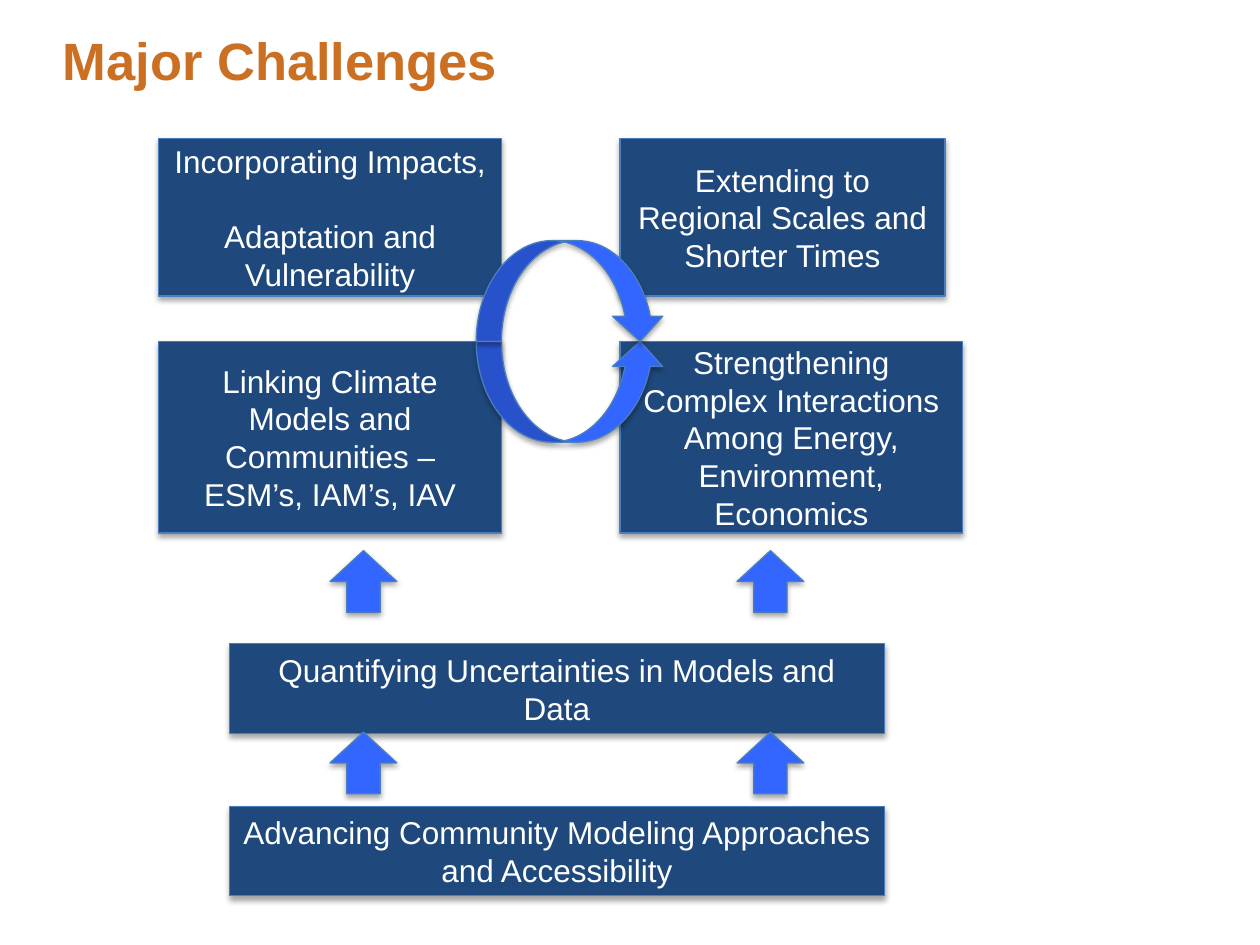
from dataclasses import dataclass
from itertools import product

from lxml.etree import SubElement
from pptx import Presentation
from pptx.dml.color import RGBColor
from pptx.enum.shapes import MSO_SHAPE
from pptx.enum.text import MSO_ANCHOR, PP_ALIGN
from pptx.oxml.ns import qn
from pptx.util import Inches, Pt


@dataclass(frozen=True)
class Theme:
    font: str = "Arial"
    title: str = "CB7023"
    box: str = "1F497D"
    arrow: str = "3366FF"
    line: str = "4B7EBC"
    text: str = "FFFFFF"
    shadow: str = "000000"
    title_size: int = 30
    box_size: int = 18
    line_width: float = 0.75


@dataclass(frozen=True)
class Box:
    text: str
    left: float
    top: float
    width: float
    height: float


THEME = Theme()
LEFT, RIGHT, BAR = 1.26, 4.92, 1.82
UPPER, LOWER = 1.1, 2.71
BOXES = (
    Box("Strengthening Complex Interactions Among Energy, Environment, Economics",
        RIGHT, LOWER, 2.72, 1.52),
    Box("Extending to Regional Scales and Shorter Times", RIGHT, UPPER, 2.58, 1.25),
    Box("Incorporating Impacts, \vAdaptation and Vulnerability", LEFT, UPPER, 2.72, 1.25),
    Box("Linking Climate Models and Communities – ESM’s, IAM’s, IAV",
        LEFT, LOWER, 2.72, 1.52),
    Box("Quantifying Uncertainties in Models and Data", BAR, 5.11, 5.2, 0.71),
    Box("Advancing Community Modeling Approaches and Accessibility", BAR, 6.4, 5.2, 0.71),
)
LOOP_LEFT, LOOP_WIDTH, LOOP_HEIGHT = 3.78, 1.5, 0.8
ARROW_TOPS, ARROW_LEFTS = (5.81, 4.37), (2.62, 5.85)
ARROW_WIDTH, ARROW_HEIGHT = 0.53, 0.49


def write(tf, text: str, *, size: float, color: str, bold: bool = False,
          align=PP_ALIGN.LEFT, anchor=MSO_ANCHOR.TOP, spacing: float = 1.0) -> None:
    """Fill a text frame with one formatted paragraph."""
    tf.word_wrap = True
    tf.vertical_anchor = anchor
    p = tf.paragraphs[0]
    p.text = text
    p.alignment = align
    p.line_spacing = spacing
    for r in p.runs:
        r.font.name = THEME.font
        r.font.size = Pt(size)
        r.font.bold = bold
        r.font.color.rgb = RGBColor.from_string(color)


def add_shadow(sp) -> None:
    """Give a shape a soft shadow falling straight down."""
    sp.shadow.inherit = False
    effects = sp._element.spPr.find(qn("a:effectLst"))
    shadow = SubElement(effects, qn("a:outerShdw"), blurRad=str(Pt(3.15)),
                        dist=str(Pt(1.8)), dir="5400000", rotWithShape="0")
    color = SubElement(shadow, qn("a:srgbClr"), val=THEME.shadow)
    SubElement(color, qn("a:alpha"), val="35000")


def draw_shape(s, kind: MSO_SHAPE, left: float, top: float, width: float,
               height: float, fill: str):
    """Draw a filled, outlined and shadowed preset shape."""
    sp = s.shapes.add_shape(kind, Inches(left), Inches(top), Inches(width), Inches(height))
    sp.fill.solid()
    sp.fill.fore_color.rgb = RGBColor.from_string(fill)
    sp.line.color.rgb = RGBColor.from_string(THEME.line)
    sp.line.width = Pt(THEME.line_width)
    add_shadow(sp)
    return sp


def draw_box(s, box: Box) -> None:
    """Draw a challenge box with centred text."""
    sp = draw_shape(s, MSO_SHAPE.RECTANGLE, box.left, box.top, box.width, box.height, THEME.box)
    write(sp.text_frame, box.text, size=THEME.box_size, color=THEME.text,
          align=PP_ALIGN.CENTER, anchor=MSO_ANCHOR.MIDDLE)


def draw_title(s, text: str) -> None:
    """Draw the slide title without insets."""
    tf = s.shapes.add_textbox(Inches(0.5), Inches(0.3), Inches(9), Inches(0.8)).text_frame
    tf.margin_left = tf.margin_right = tf.margin_top = tf.margin_bottom = 0
    write(tf, text, size=THEME.title_size, color=THEME.title, bold=True, spacing=0.85)


def main() -> None:
    """Build and save the slide."""
    prs = Presentation()
    prs.slide_width, prs.slide_height = Inches(10), Inches(7.5)
    s = prs.slides.add_slide(prs.slide_layouts[6])
    draw_title(s, "Major Challenges")
    for box in BOXES:
        draw_box(s, box)
    for kind, top in ((MSO_SHAPE.CURVED_UP_ARROW, LOWER),
                      (MSO_SHAPE.CURVED_DOWN_ARROW, LOWER - LOOP_HEIGHT)):
        draw_shape(s, kind, LOOP_LEFT, top, LOOP_WIDTH, LOOP_HEIGHT, THEME.arrow)
    for top, left in product(ARROW_TOPS, ARROW_LEFTS):
        draw_shape(s, MSO_SHAPE.UP_ARROW, left, top, ARROW_WIDTH, ARROW_HEIGHT, THEME.arrow)
    prs.save("out.pptx")


if __name__ == "__main__":
    main()
